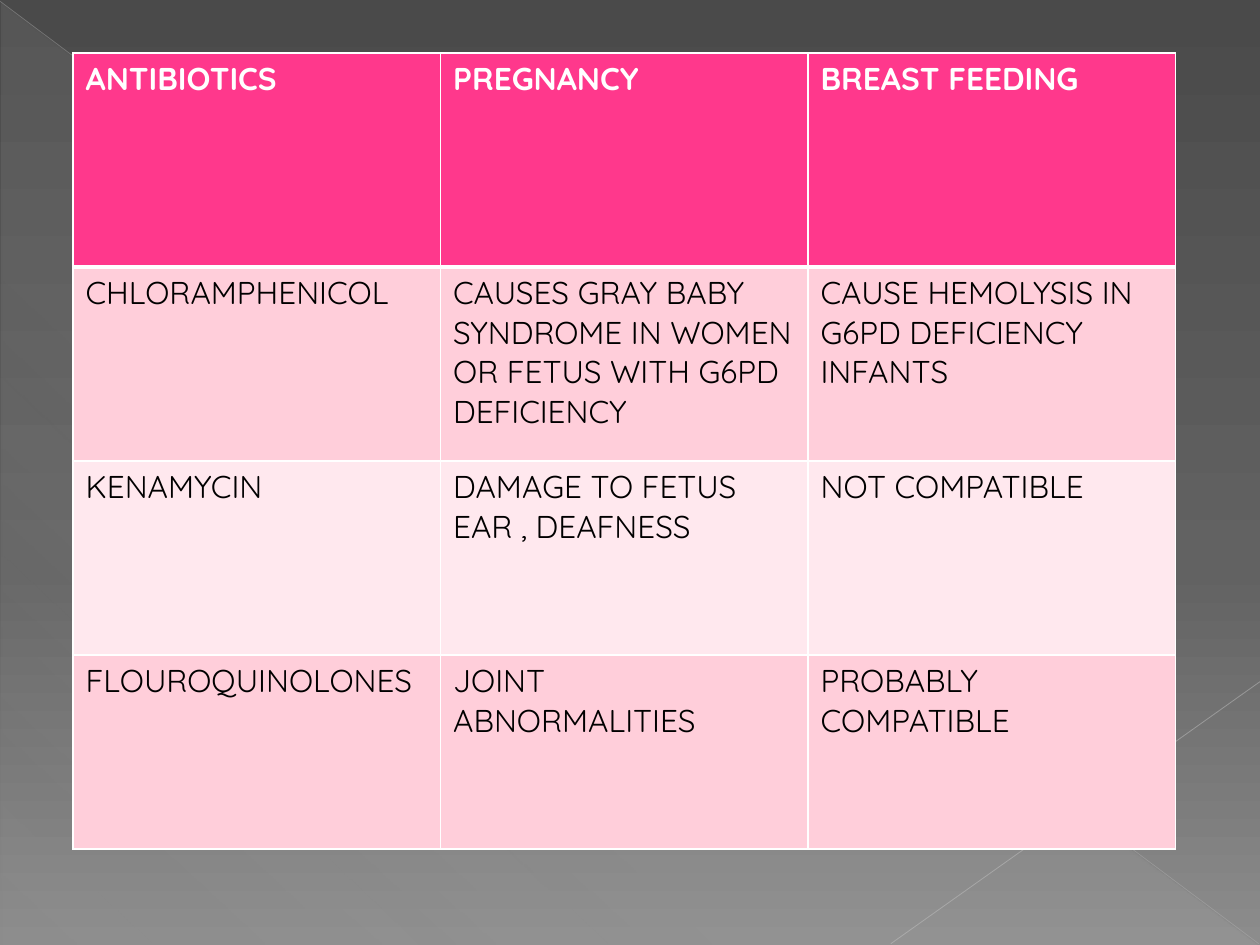
from dataclasses import dataclass

from lxml.etree import SubElement as Sub
from pptx import Presentation
from pptx.dml.color import RGBColor as Rgb
from pptx.enum.shapes import MSO_CONNECTOR as Link, MSO_SHAPE as Shape
from pptx.oxml.ns import qn
from pptx.util import Inches, Pt

FONT = "Quicksand"
HEX = {
    "dark": "4A4A4A", "mid": "626262", "light": "8C8C8C",
    "sheen": "D2D2D2", "long": "BFBFBF", "short": "C6C6C6",
    "white": "FFFFFF", "black": "000000",
    "head": "FF388C", "odd": "FFCEDA", "even": "FFE8EE",
}


@dataclass
class Stop:
    place: int
    hue: str
    alpha: int = 100


@dataclass
class Line:
    start: tuple[float, float]
    end: tuple[float, float]
    hue: str
    width: float
    alpha: int


@dataclass
class Row:
    texts: tuple[str, str, str]
    fill: str
    height: float = 1.54
    ink: str = "black"
    bold: bool = False
    top: int = 1
    base: int = 1


LINES = [
    Line((0, 0.01), (9.99, 7.49), "long", 0.39, 35),
    Line((10, 5.41), (7.07, 7.49), "short", 0.47, 45),
]
ROWS = [
    Row(("ANTIBIOTICS", "PREGNANCY", "BREAST FEEDING"),
        "head", 1.7, "white", True, base=3),
    Row(("CHLORAMPHENICOL",
         "CAUSES GRAY BABY SYNDROME IN WOMEN OR FETUS WITH G6PD DEFICIENCY",
         "CAUSE HEMOLYSIS IN G6PD DEFICIENCY INFANTS"), "odd", top=3),
    Row(("KENAMYCIN", "DAMAGE TO FETUS EAR , DEAFNESS", "NOT COMPATIBLE"),
        "even"),
    Row(("FLOUROQUINOLONES", "JOINT ABNORMALITIES", "PROBABLY COMPATIBLE"),
        "odd"),
]


def add_hue(node, hue: str, alpha: int = 100) -> None:
    tint = Sub(node, qn("a:srgbClr"), val=HEX[hue])
    if alpha < 100:
        Sub(tint, qn("a:alpha"), val=str(alpha * 1000))


def blend(owner, fill, stops: list[Stop], angle: int) -> None:
    fill.gradient()
    grad = next(owner.element.iter(qn("a:gradFill")))
    group = grad.find(qn("a:gsLst"))
    for old in list(group):
        group.remove(old)
    for stop in stops:
        add_hue(Sub(group, qn("a:gs"), pos=str(stop.place * 1000)),
                stop.hue, stop.alpha)
    grad.find(qn("a:lin")).set("ang", str(angle * 60000))


def draw_sheen(slide) -> None:
    sheen = slide.shapes.add_shape(
        Shape.RIGHT_TRIANGLE, Inches(0.01), Inches(0.02),
        Inches(9.98), Inches(7.48))
    sheen.shadow.inherit = False
    sheen.line.fill.background()
    blend(sheen, sheen.fill, [Stop(0, "sheen", 10), Stop(70, "sheen", 8),
                              Stop(100, "sheen", 1)], 133)


def draw_line(slide, line: Line) -> None:
    ends = [Inches(n) for n in (*line.start, *line.end)]
    link = slide.shapes.add_connector(Link.STRAIGHT, *ends)
    link.line.width = Pt(line.width)
    link.line.color.rgb = Rgb.from_string(HEX[line.hue])
    tint = next(link.element.spPr.iter(qn("a:srgbClr")))
    Sub(tint, qn("a:alpha"), val=str(line.alpha * 1000))
    Sub(link.element.spPr, qn("a:effectLst"))


def draw_cell(cell, text: str, row: Row) -> None:
    props = cell._tc.get_or_add_tcPr()
    for side, width in zip("LRTB", (1, 1, row.top, row.base)):
        edge = Sub(props, qn(f"a:ln{side}"), w=str(Pt(width)))
        add_hue(Sub(edge, qn("a:solidFill")), "white")
    cell.fill.solid()
    cell.fill.fore_color.rgb = Rgb.from_string(HEX[row.fill])
    run = cell.text_frame.paragraphs[0].add_run()
    run.text = text
    run.font.name = FONT
    run.font.size = Pt(18)
    run.font.bold = row.bold
    run.font.color.rgb = Rgb.from_string(HEX[row.ink])


def draw_table(slide, rows: list[Row]) -> None:
    width, count = Inches(8.75), len(rows[0].texts)
    height = Inches(sum(row.height for row in rows))
    table = slide.shapes.add_table(
        len(rows), count, Inches(0.58), Inches(0.42), width, height).table
    for col in table.columns:
        col.width = width // count
    for r, row in enumerate(rows):
        table.rows[r].height = Inches(row.height)
        for c, text in enumerate(row.texts):
            draw_cell(table.cell(r, c), text, row)


def main() -> None:
    deck = Presentation()
    deck.slide_width, deck.slide_height = Inches(10), Inches(7.5)
    slide = deck.slides.add_slide(deck.slide_layouts[6])
    blend(slide, slide.background.fill,
          [Stop(0, "dark"), Stop(60, "mid"), Stop(100, "light")], 90)
    draw_sheen(slide)
    for line in LINES:
        draw_line(slide, line)
    draw_table(slide, ROWS)
    deck.save("out.pptx")


if __name__ == "__main__":
    main()
